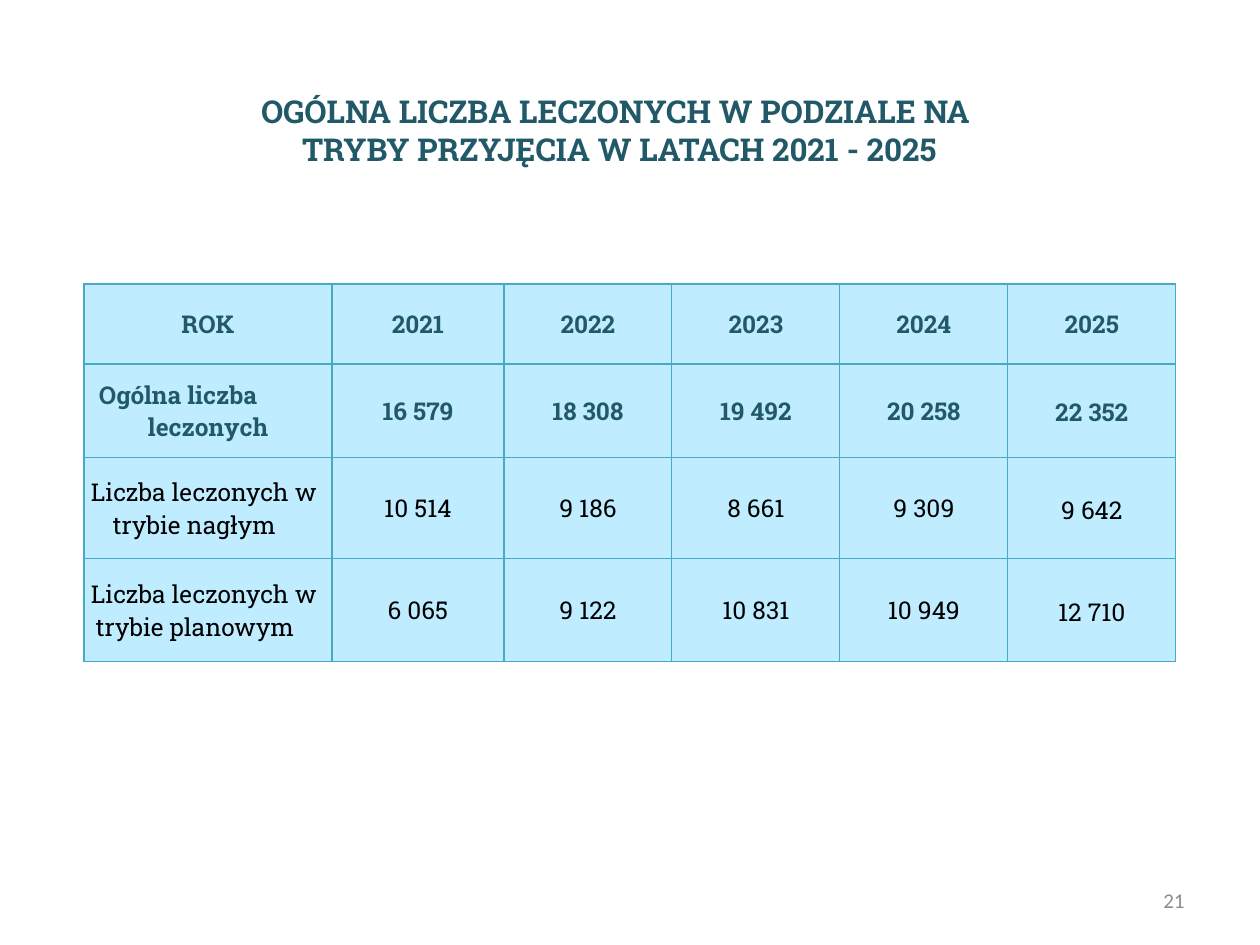
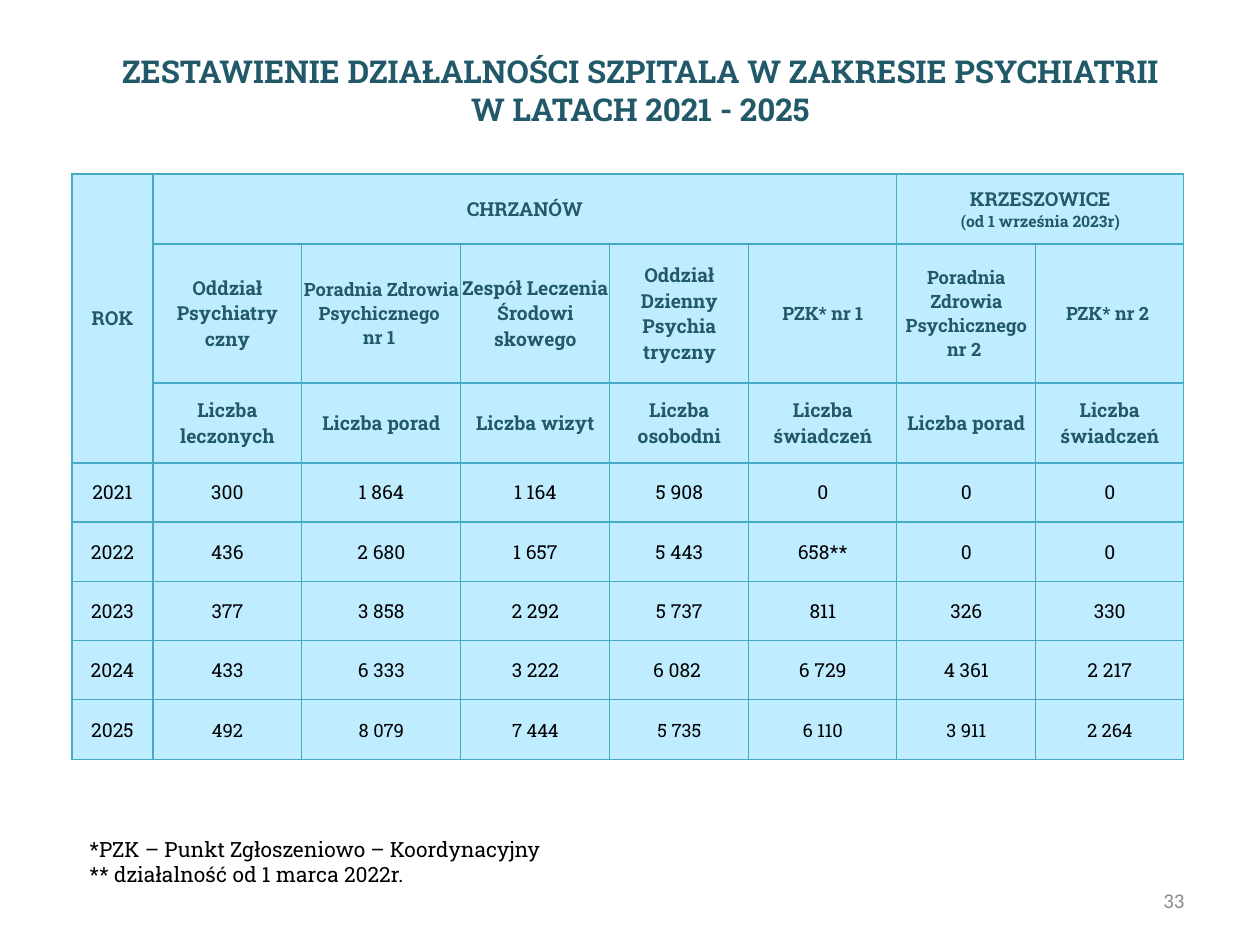
from lxml import etree
from pptx import Presentation
from pptx import util as u
from pptx.dml.color import RGBColor
from pptx.enum import text
from pptx.oxml.ns import qn

SERIF, SANS = "Roboto Slab", "Calibri"
TEAL, BLACK, GREY = "215968", "000000", "8B8B8B"
CELL_FILL, CELL_LINE = "BFECFF", "46AAC4"
CENTER, RIGHT, LEFT = text.PP_ALIGN.CENTER, text.PP_ALIGN.RIGHT, text.PP_ALIGN.LEFT
MIDDLE, TOP = text.MSO_ANCHOR.MIDDLE, text.MSO_ANCHOR.TOP

TREATED = [
    ["ROK", "2021", "2022", "2023", "2024", "2025"],
    ["Ogólna liczba leczonych", "16 579", "18 308", "19 492", "20 258", "22 352"],
    ["Liczba leczonych w trybie nagłym", "10 514", "9 186", "8 661", "9 309", "9 642"],
    ["Liczba leczonych w trybie planowym", "6 065", "9 122", "10 831", "10 949", "12 710"],
]
LABEL_INDENTS = {1: (14, 63), 2: (6, 28), 3: (6, 11)}

PSYCHIATRY = [
    ["ROK", "CHRZANÓW", "", "", "", "", "KRZESZOWICE\n(od 1 września 2023r)", ""],
    ["", "Oddział Psychiatry czny", "Poradnia Zdrowia Psychicznego \nnr 1 ",
     "Zespół Leczenia Środowi skowego", "Oddział Dzienny Psychia tryczny",
     "PZK* nr 1", "Poradnia Zdrowia Psychicznego nr 2 ", "PZK* nr 2 "],
    ["", "Liczba leczonych", "Liczba porad", "Liczba wizyt", "Liczba osobodni",
     "Liczba świadczeń", "Liczba porad", "Liczba świadczeń"],
    ["2021", "300", "1 864", "1 164", "5 908", "0", "0", "0"],
    ["2022", "436", "2 680", "1 657", "5 443", "658**", "0", "0"],
    ["2023", "377", "3 858", "2 292", "5 737", "811", "326", "330"],
    ["2024", "433", "6 333", "3 222", "6 082 ", "6 729", "4 361", "2 217"],
    ["2025", "492", "8 079", "7 444", "5 735", "6 110", "3 911", "2 264"],
]
PSYCHIATRY_MERGES = [(0, 0, 2, 0), (0, 1, 0, 5), (0, 6, 0, 7)]
SMALL_HEADERS = {(1, 2), (1, 5), (1, 6), (1, 7)}


def px(n):
    return u.Emu(round(n * 914400 / 126))


def rgb(color):
    return RGBColor.from_string(color)


def write(tf, content, size=12, font=SERIF, color=BLACK, bold=False,
          align=LEFT, spacing=None):
    for i, line in enumerate(content.split("\n")):
        p = tf.paragraphs[0] if i == 0 else tf.add_paragraph()
        p.alignment = align
        if spacing:
            p.line_spacing = spacing
        r = p.add_run()
        r.text = line
        r.font.size, r.font.name, r.font.bold = u.Pt(size), font, bold
        r.font.color.rgb = rgb(color)


def place(sp, box, anchor):
    sp.left, sp.top, sp.width, sp.height = map(px, box)
    tf = sp.text_frame
    tf.word_wrap, tf.auto_size = True, text.MSO_AUTO_SIZE.NONE
    tf.vertical_anchor = anchor
    return tf


def add_text(s, box, content, anchor=TOP, **fmt):
    write(place(s.shapes.add_textbox(0, 0, 0, 0), box, anchor), content, **fmt)


def add_slide(prs, title, box, number):
    s = prs.slides.add_slide(prs.slide_layouts[5])
    write(place(s.shapes.title, box, TOP), title,
          size=18, color=TEAL, bold=True, align=CENTER)
    add_text(s, (903, 876, 294, 49), number, anchor=MIDDLE,
             font=SANS, color=GREY, align=RIGHT)
    return s


def style_cell(cell, inset):
    cell.vertical_anchor = MIDDLE
    cell.margin_left = cell.margin_right = px(inset)
    cell.margin_top = cell.margin_bottom = px(6)
    tc_pr = cell._tc.get_or_add_tcPr()
    for side in ("lnL", "lnR", "lnT", "lnB"):
        ln = etree.SubElement(tc_pr, qn("a:" + side), w=str(u.Pt(0.75)))
        fill = etree.SubElement(ln, qn("a:solidFill"))
        etree.SubElement(fill, qn("a:srgbClr"), val=CELL_LINE)
    cell.fill.solid()
    cell.fill.fore_color.rgb = rgb(CELL_FILL)


def add_grid(s, origin, cols, rows, data, cell_format, merges=()):
    box = (*origin, sum(cols), sum(rows))
    table = s.shapes.add_table(len(rows), len(cols), *map(px, box)).table
    table.first_row = table.horz_banding = False
    for col, width in zip(table.columns, cols):
        col.width = px(width)
    for row, height in zip(table.rows, rows):
        row.height = px(height)
    for top, left, bottom, right in merges:
        table.cell(top, left).merge(table.cell(bottom, right))
    for i, values in enumerate(data):
        for j, value in enumerate(values):
            fmt = cell_format(i, j)
            cell = table.cell(i, j)
            style_cell(cell, 6 if "spacing" in fmt else 1)
            if value:
                write(cell.text_frame, value, **{"align": CENTER, **fmt})
    return table


def treated_format(i, j):
    fmt = dict(size=14, color=TEAL if i < 2 else BLACK, bold=i < 2)
    if i and j == 5:
        fmt["spacing"] = 1.07
    if i and j == 0:
        fmt["align"] = LEFT
    return fmt


def psychiatry_format(i, j):
    header = i < 3
    fmt = dict(size=10.5 if (i, j) in SMALL_HEADERS else 11,
               color=TEAL if header else BLACK, bold=header)
    if i == 7 and j:
        fmt.update(size=10.5, spacing=1.07)
    return fmt


def treated_slide(prs):
    title = "OGÓLNA LICZBA LECZONYCH W PODZIALE NA \nTRYBY PRZYJĘCIA W LATACH 2021 - 2025"
    s = add_slide(prs, title, (84, 86, 1071, 88), "21")
    table = add_grid(s, (84, 284), [248, 172] + [168] * 4, [80, 94, 101, 103],
                     TREATED, treated_format)
    for i, (first, rest) in LABEL_INDENTS.items():
        p_pr = table.cell(i, 0).text_frame.paragraphs[0]._p.get_or_add_pPr()
        p_pr.set("marL", str(px(rest)))
        p_pr.set("indent", str(px(first - rest)))


def psychiatry_slide(prs):
    title = "ZESTAWIENIE DZIAŁALNOŚCI SZPITALA W ZAKRESIE PSYCHIATRII W LATACH 2021 - 2025"
    s = add_slide(prs, title, (105, 46, 1071, 88), "33")
    table = add_grid(s, (72, 174), [81, 149, 159, 149, 139, 148, 139, 148],
                     [70, 139, 80, 59, 60, 59, 59, 60],
                     PSYCHIATRY, psychiatry_format, PSYCHIATRY_MERGES)
    since = table.cell(0, 6).text_frame.paragraphs[1]
    since.runs[0].font.size = u.Pt(9)
    add_text(s, (77, 830, 1071, 63),
             "*PZK – Punkt Zgłoszeniowo – Koordynacyjny\n** działalność od 1 marca 2022r.")


def main():
    prs = Presentation()
    prs.slide_width, prs.slide_height = px(1260), px(945)
    treated_slide(prs)
    psychiatry_slide(prs)
    prs.save("out.pptx")


if __name__ == "__main__":
    main()
